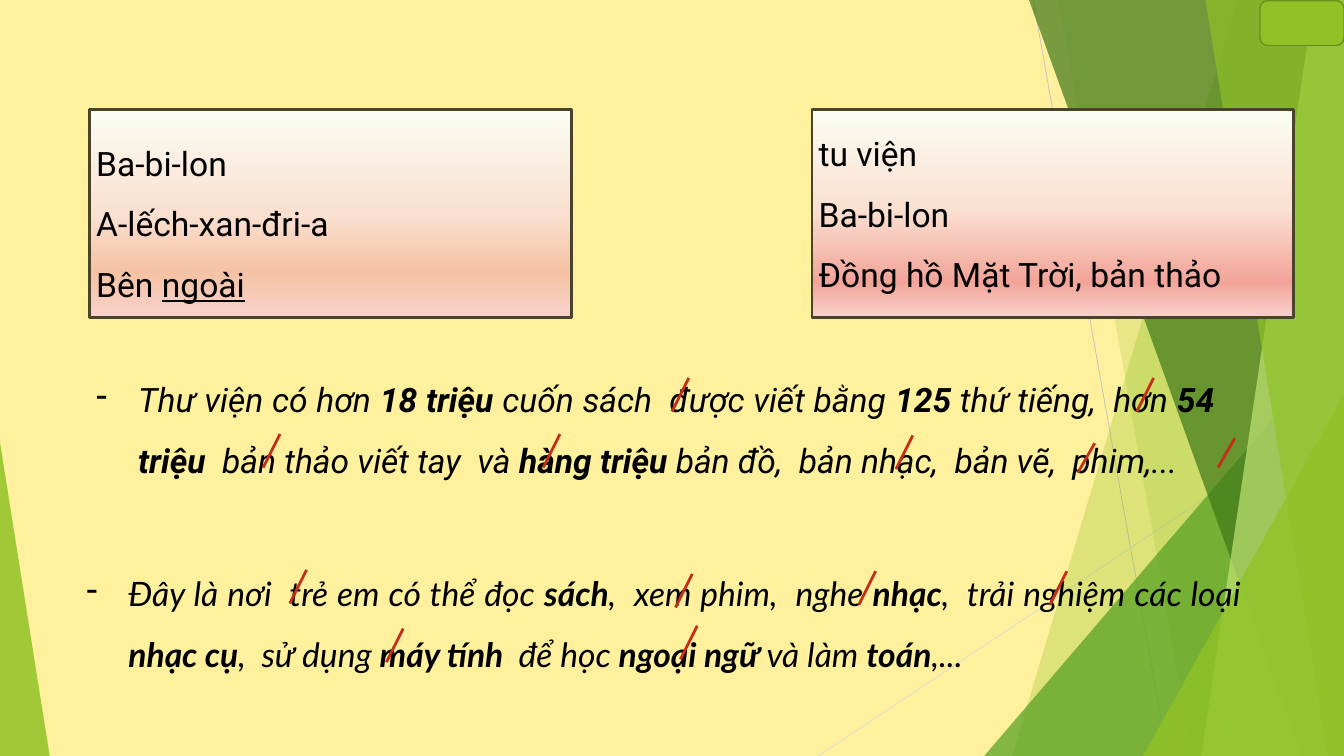
from copy import deepcopy

from lxml import etree
from pptx import Presentation
from pptx.dml.color import RGBColor
from pptx.enum.shapes import MSO_CONNECTOR, MSO_SHAPE
from pptx.enum.text import MSO_ANCHOR, PP_ALIGN
from pptx.oxml.ns import qn
from pptx.util import Pt

PX = 9525  # EMU per px, 96 px to the inch
SLIDE_BOX = (0, 0, 1920, 1080)

STRAIGHT = MSO_CONNECTOR.STRAIGHT
TRIANGLE = MSO_SHAPE.ISOSCELES_TRIANGLE
RECTANGLE = MSO_SHAPE.RECTANGLE
ROUNDED = MSO_SHAPE.ROUNDED_RECTANGLE
MIDDLE = MSO_ANCHOR.MIDDLE
JUSTIFY = PP_ALIGN.JUSTIFY

CREAM = RGBColor(0xFF, 0xF0, 0x9E)
BLACK = RGBColor(0, 0, 0)
RED = RGBColor(0xC4, 0x2F, 0x1A)
UMBER = RGBColor(0x48, 0x43, 0x2A)
LIME = RGBColor(0x90, 0xC2, 0x26)
LIME_EDGE = RGBColor(0x6B, 0x90, 0x1C)
PALE_LIME = RGBColor(0xC0, 0xE4, 0x74)
LEAF = RGBColor(0x54, 0xA0, 0x21)
FOREST = RGBColor(0x3F, 0x78, 0x19)
GREY = RGBColor(0xBF, 0xBF, 0xBF)
PALE_GREY = RGBColor(0xD9, 0xD9, 0xD9)
IVORY = RGBColor(0xFA, 0xFD, 0xF3)
PEACH = RGBColor(0xFA, 0xE0, 0xD1)
APRICOT = RGBColor(0xF5, 0xC2, 0xA3)
CORAL = RGBColor(0xF2, 0xA4, 0x99)
PINK = RGBColor(0xF8, 0xD2, 0xCC)

ORANGE_FADE = [(0, IVORY), (0.5, PEACH), (0.78, APRICOT), (1, PINK)]
RED_FADE = [(0, IVORY), (0.48, PEACH), (0.83, CORAL), (1, PINK)]


def emu(*lengths):
    return [length * PX for length in lengths]


def add_line(slide, start, end, color, width):
    line = slide.shapes.add_connector(STRAIGHT, *emu(*start, *end))
    line.line.color.rgb = color
    line.line.width = Pt(width)
    etree.SubElement(line._element.spPr, qn("a:effectLst"))


def fill_facet(facet, color, opacity):
    """Fill a borderless shape with a see-through colour."""
    facet.shadow.inherit = False
    facet.fill.solid()
    facet.fill.fore_color.rgb = color
    facet.line.fill.background()
    rgb = facet._element.spPr.find(qn("a:solidFill")).find(qn("a:srgbClr"))
    etree.SubElement(rgb, qn("a:alpha"), val=str(opacity * 1000))


def add_run(paragraph, text, **format_values):
    run = paragraph.add_run()
    run.text = text
    run.font.size = Pt(36)
    run.font.color.rgb = BLACK
    for attribute, value in format_values.items():
        setattr(run.font, attribute, value)


def add_backdrop(slide, box):
    """Green facets on the right edge and in the lower left corner."""
    left, top, width, height = box
    right, bottom = left + width, top + height

    def band(top_x, bottom_x, color, opacity):
        builder = slide.shapes.build_freeform(left + top_x, top, scale=PX)
        builder.add_line_segments(
            [(right, top), (right, bottom), (left + bottom_x, bottom)])
        fill_facet(builder.convert_to_shape(), color, opacity)

    def corner(x, w, h, apex, color, opacity):
        facet = slide.shapes.add_shape(
            TRIANGLE, *emu(left + x, bottom - h, w, h))
        facet.adjustments[0] = apex
        fill_facet(facet, color, opacity)

    add_line(slide, (left + 1476, top), (left + 1668, bottom), GREY, 0.75)
    add_line(slide, (right, top + 580), (left + 1169, bottom), PALE_GREY, 0.75)
    band(1768, 1446, LIME, 30)
    band(1512, 1703, LIME, 20)
    corner(1406, 514, 600, 1, LEAF, 72)
    band(1470, 1860, FOREST, 70)
    band(1877, 1716, PALE_LIME, 70)
    band(1722, 1897, LIME, 65)
    corner(1633, 286, 515, 1, LIME, 80)
    corner(0, 71, 448, 0, LIME, 85)


def add_word_card(slide, box, fade, lines, bottom_inset=5):
    """Framed gradient card; each line is a list of (text, underlined)."""
    card = slide.shapes.add_shape(RECTANGLE, *emu(*box))
    card.shadow.inherit = False
    card.line.color.rgb = UMBER
    card.line.width = Pt(3)
    card.fill.gradient()
    card.fill.gradient_angle = 270
    stop_list = card._element.spPr.find(qn("a:gradFill")).find(qn("a:gsLst"))
    while len(stop_list) < len(fade):
        stop_list.append(deepcopy(stop_list[0]))
    for stop, (position, color) in zip(card.fill.gradient_stops, fade):
        stop.position = position
        stop.color.rgb = color

    frame = card.text_frame
    frame.word_wrap = True
    frame.vertical_anchor = MIDDLE
    frame.margin_bottom = bottom_inset * PX
    for index, line in enumerate(lines):
        paragraph = frame.add_paragraph() if index else frame.paragraphs[0]
        paragraph.alignment = JUSTIFY
        paragraph.line_spacing = 1.5
        for text, underlined in line:
            add_run(paragraph, text, name="Roboto", underline=underlined)


def add_reading(slide, box, font_name, parts, pauses):
    """Dashed sentence, every second part bold, with red pause strokes.

    A pause is the upper right end of a stroke and its height.
    """
    left, top = box[:2]
    frame = slide.shapes.add_textbox(*emu(*box)).text_frame
    frame.word_wrap = True
    sentence = frame.paragraphs[0]
    sentence.alignment = JUSTIFY
    sentence.line_spacing = 1.5
    properties = sentence._p.get_or_add_pPr()
    properties.set("marL", str(60 * PX))
    properties.set("indent", str(-60 * PX))
    etree.SubElement(properties, qn("a:buChar"), char="-")
    for index, text in enumerate(parts):
        add_run(sentence, text, name=font_name, italic=True,
                bold=index % 2 == 1)

    for x, y, stroke_height in pauses:
        add_line(slide, (left + x, top + y),
                 (left + x - 24, top + y + stroke_height), RED, 3)


def add_corner_button(slide, box):
    button = slide.shapes.add_shape(ROUNDED, *emu(*box))
    button.shadow.inherit = False
    button.fill.solid()
    button.fill.fore_color.rgb = LIME
    button.line.color.rgb = LIME_EDGE
    button.line.width = Pt(1.5)


def main():
    deck = Presentation()
    deck.slide_width, deck.slide_height = emu(*SLIDE_BOX[2:])
    slide = deck.slides.add_slide(deck.slide_layouts[6])
    slide.background.fill.solid()
    slide.background.fill.fore_color.rgb = CREAM
    add_backdrop(slide, SLIDE_BOX)

    # Hard words
    add_word_card(slide, (128, 156, 688, 298), ORANGE_FADE, [
        [("Ba-bi-lon", False)],
        [("A-lếch-xan-đri-a", False)],
        [("Bên ", False), ("ngoài", True)]])
    add_word_card(slide, (1160, 156, 688, 298), RED_FADE, [
        [("tu viện", False)],
        [("Ba-bi-lon", False)],
        [("Đồng hồ Mặt Trời, bản thảo", False)]], bottom_inset=33)

    # Long sentences with pauses
    add_reading(
        slide, (128, 508, 1616, 272), "Roboto",
        ["Thư viện có hơn ", "18 triệu ", "cuốn sách  được viết bằng ", "125",
         " thứ tiếng,  hơn ", "54 triệu ", " bản thảo viết tay  và ",
         "hàng triệu", " bản đồ,  bản nhạc,  bản vẽ,  phim,..."],
        [(856, 32, 48), (1520, 32, 48), (272, 112, 48), (672, 112, 48),
         (1176, 114, 48), (1436, 125, 42), (1636, 118, 42)])
    add_reading(
        slide, (114, 785, 1668, 184), "Lato",
        ["Đây là nơi  trẻ em có thể đọc ", "sách", ",  xem phim,  nghe ",
         "nhạc", ",  trải nghiệm các loại ", "nhạc cụ", ",  sử dụng ",
         "máy tính ", " để học ", "ngoại ngữ ", "và làm ", "toán", ",..."],
        [(324, 29, 48), (875, 35, 48), (1137, 31, 48), (1410, 31, 48),
         (462, 113, 48), (882, 109, 48)])

    add_corner_button(slide, (1800, 1, 120, 64))
    deck.save("out.pptx")


if __name__ == "__main__":
    main()
